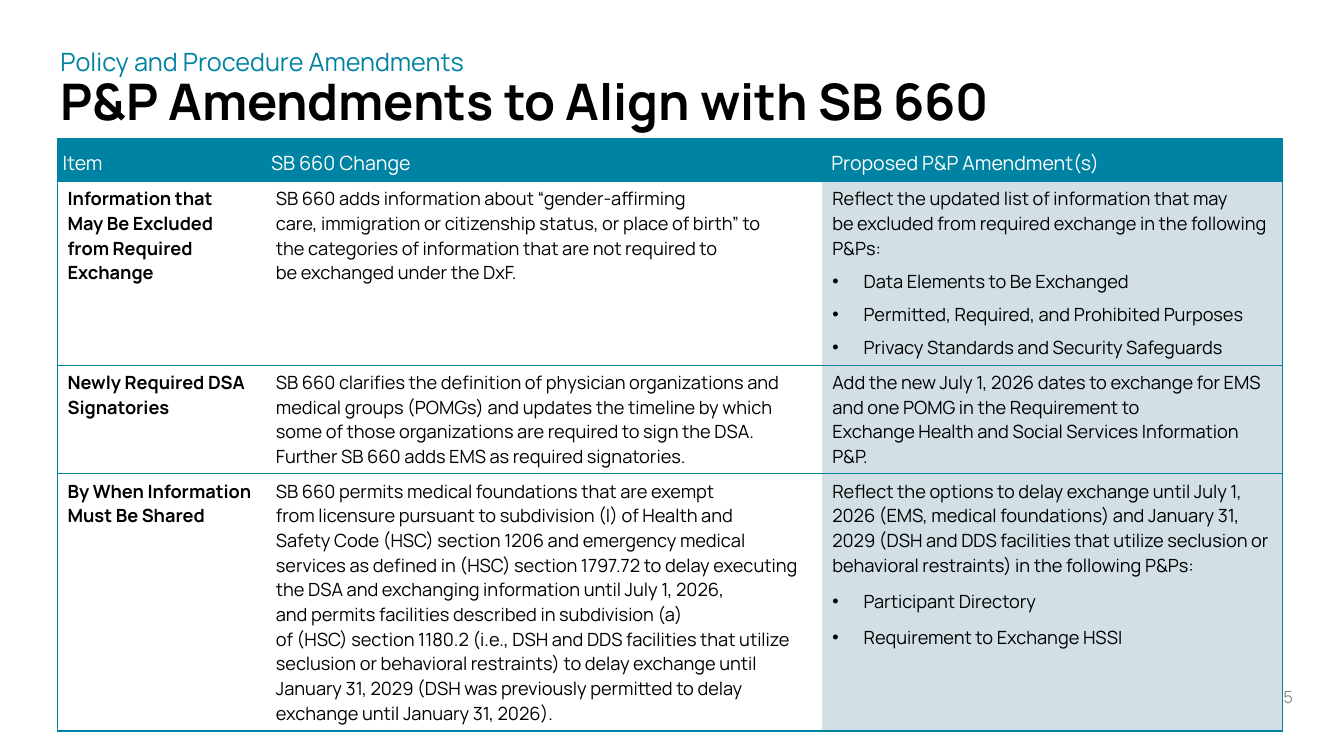
from lxml import etree
from pptx import Presentation
from pptx import util as u
from pptx.dml import color
from pptx.enum import text
from pptx.oxml import ns

TEAL, PALE, BLACK, WHITE, GREY = "0083A2", "D2DFE5", "000000", "FFFFFF", "8C8C8C"
TIE, HARD_SPACE = "~", chr(160)  # a tie in the wording stands for a no-break space

HEADINGS = ["Item", "SB 660 Change", "Proposed P&P Amendment(s)"]
# Each amendment: item lines, change, proposal, proposal bullets, space after (pt)
AMENDMENTS = [
    (["Information~that~", "May~Be~Excluded~", "from~Required~", "Exchange~"],
     "SB 660 adds information about “gender-affirming care,~immigration or citizenship status, "
     "or place of birth” to the~categories of information that are not required to "
     "be~exchanged under the~DxF.~",
     "Reflect the updated list of information that may be~excluded from required~exchange "
     "in the following P&Ps:~",
     ["Data Elements to Be Exchanged~", "Permitted, Required, and Prohibited Purposes~",
      "Privacy Standards and Security Safeguards"], 6),
    (["Newly~Required~DSA~Signatories~"],
     "SB 660 clarifies the definition of physician organizations and medical groups (POMGs) "
     "and updates the~timeline by which some of those organizations are required~to sign "
     "the DSA. Further SB 660 adds EMS as required~signatories.",
     "Add the new July 1,~2026~dates to exchange for EMS and~one POMG in the Requirement to "
     "Exchange~Health and Social Services Information P&P.",
     [], 0),
    (["By~When~Information Must~Be~Shared~~"],
     "SB 660 permits medical foundations that are exempt from~licensure pursuant to "
     "subdivision (I) of~Health and Safety~Code (HSC) section 1206 and emergency medical "
     "services~as defined in~(HSC) section 1797.72 to delay executing the~DSA and exchanging "
     "information until July 1, 2026, and~permits facilities described in subdivision (a) "
     "of~(HSC)~section 1180.2 (i.e., DSH and DDS facilities that utilize seclusion~or "
     "behavioral restraints) to delay exchange until January 31,~2029 (DSH was previously "
     "permitted to delay exchange until~January 31, 2026).~",
     "Reflect the options to delay exchange until July 1, 2026~(EMS, medical foundations) and "
     "January 31, 2029 (DSH~and DDS facilities that utilize seclusion or behavioral~"
     "restraints) in the following P&Ps:~",
     ["Participant Directory", "Requirement to Exchange HSSI"], 8),
]


def rgb(value):
    return color.RGBColor.from_string(value)


def apply(target, values):
    for name, value in values.items():
        setattr(target, name, value)


class Deck:
    font = "Manrope"
    no_style = "{2D5ABB26-0587-4C30-8999-92F81FD0307C}"

    def __init__(self, width, height):
        self.prs = Presentation()
        apply(self.prs, {"slide_width": u.Cm(width), "slide_height": u.Cm(height)})
        self.slide = self.prs.slides.add_slide(self.prs.slide_layouts[5])

    def run(self, paragraph, words, size, ink, bold=False):
        run = paragraph.add_run()
        run.text = words.replace(TIE, HARD_SPACE)
        apply(run.font, {"name": self.font, "size": u.Pt(size), "bold": bold})
        run.font.color.rgb = rgb(ink)

    def title(self, box, kicker, headline):
        title = self.slide.shapes.title
        apply(title, dict(zip(("left", "top", "width", "height"), map(u.Cm, box))))
        apply(title.text_frame, {"vertical_anchor": text.MSO_ANCHOR.MIDDLE,
                                 "word_wrap": True, "auto_size": text.MSO_AUTO_SIZE.NONE})
        line = title.text_frame.paragraphs[0]
        apply(line, {"alignment": text.PP_ALIGN.LEFT, "line_spacing": 0.9})
        self.run(line, kicker, 18, TEAL)
        line.add_line_break()
        etree.SubElement(line._p[-1], ns.qn("a:rPr"), sz="1800")
        self.run(line, headline, 36, BLACK, True)

    def page_number(self, box, number):
        frame = self.slide.shapes.add_textbox(*map(u.Cm, box)).text_frame
        apply(frame, {"word_wrap": True, "vertical_anchor": text.MSO_ANCHOR.MIDDLE})
        frame.paragraphs[0].alignment = text.PP_ALIGN.RIGHT
        self.run(frame.paragraphs[0], number, 12, GREY)

    def table(self, left, top, widths, heights):
        frame = self.slide.shapes.add_table(
            len(heights), len(widths), *map(u.Cm, (left, top, sum(widths), sum(heights))))
        table = frame.table
        table._tbl.tblPr.find(ns.qn("a:tableStyleId")).text = self.no_style
        for column, width in zip(table.columns, widths):
            column.width = u.Cm(width)
        for row, height in zip(table.rows, heights):
            row.height = u.Cm(height)
        return table

    def cell(self, cell, fill, edges):
        if fill:
            cell.fill.solid()
            cell.fill.fore_color.rgb = rgb(fill)
        else:
            cell.fill.background()
        present = [side for side in "LRTB" if side in edges]
        for place, side in enumerate(present):
            line = etree.Element(ns.qn(f"a:ln{side}"), w=str(u.Pt(edges[side])))
            solid = etree.SubElement(line, ns.qn("a:solidFill"))
            etree.SubElement(solid, ns.qn("a:srgbClr"), val=TEAL)
            cell._tc.get_or_add_tcPr().insert(place, line)

    def paragraphs(self, cell, lines, bold=False, after=0, bullets=()):
        frame = cell.text_frame
        for index, words in enumerate([*lines, *bullets]):
            paragraph = frame.add_paragraph() if index else frame.paragraphs[0]
            if index >= len(lines):
                props = paragraph._p.get_or_add_pPr()
                props.set("marL", str(u.Cm(0.79)))
                props.set("indent", str(-u.Cm(0.79)))
                etree.SubElement(props, ns.qn("a:buFont"), typeface="Arial")
                etree.SubElement(props, ns.qn("a:buChar"), char="•")
            paragraph.space_after = u.Pt(after)
            self.run(paragraph, words, 13, BLACK, bold)


def main():
    deck = Deck(33.87, 19.05)

    # Page number and title
    deck.page_number((30.81, 16.84, 2.03, 1.45), "15")
    deck.title((1.27, 0.76, 31.32, 3.05), "Policy and Procedure Amendments",
               "P&P Amendments to Align with SB 660")

    # Table frame: fills and outer and row lines
    table = deck.table(1.45, 3.48, (5.25, 14.02, 11.59), (1.09, 4.63, 2.74, 6.48))
    last = len(HEADINGS) - 1
    for r, row in enumerate(table.rows):
        for c, cell in enumerate(row.cells):
            edges = {"B": 1 if r else 0.5, "T": 0.5 if r == 1 else 1}
            if c == 0:
                edges["L"] = 1
            if c == last:
                edges["R"] = 1
            deck.cell(cell, TEAL if r == 0 else PALE if c == last else None, edges)

    # Header row
    for c, heading in enumerate(HEADINGS):
        cell = table.cell(0, c)
        apply(cell, {"margin_left": u.Cm(0.23 if c == last else 0.13),
                     "margin_right": u.Cm(0.13), "margin_top": u.Cm(0.14)})
        paragraph = cell.text_frame.paragraphs[0]
        paragraph.line_spacing = u.Pt(23.2)
        deck.run(paragraph, heading, 14, WHITE)

    # Amendments
    for r, (item, change, proposal, bullets, after) in enumerate(AMENDMENTS, 1):
        deck.paragraphs(table.cell(r, 0), item, bold=True)
        deck.paragraphs(table.cell(r, 1), [change], after=6)
        deck.paragraphs(table.cell(r, 2), [proposal], after=after, bullets=bullets)

    deck.prs.save("out.pptx")


if __name__ == "__main__":
    main()
